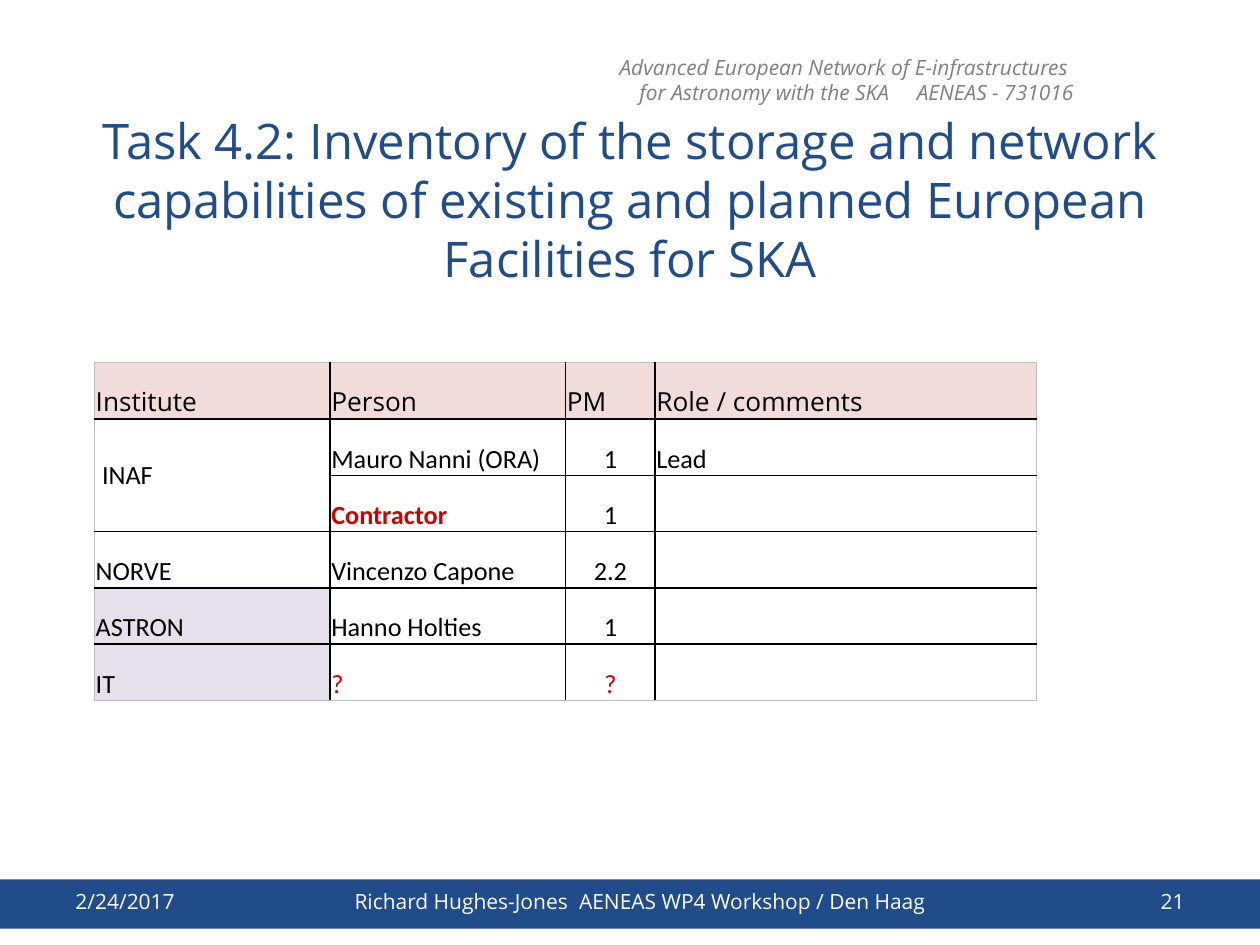
import dataclasses
import pptx
import pptx.dml.color
import pptx.enum.shapes
import pptx.enum.text
import pptx.oxml
import pptx.oxml.ns
import pptx.util

WIDE, HIGH = 10, 7.5
BLUE, WHITE, GREY, BLACK, RED = "204C8A", "FFFFFF", "808080", "000000", "CC0000"
PINK, LILAC, EDGE = "F2DCDB", "E6E0EC", "BFBFBF"
SANS, BODY = "Open Sans", "Calibri"
ALIGN = pptx.enum.text.PP_ALIGN
ANCHOR = pptx.enum.text.MSO_ANCHOR
inch = pptx.util.Inches


@dataclasses.dataclass
class Label:
    left: float
    top: float
    width: float
    height: float
    lines: list
    align: int
    color: str = WHITE
    italic: bool = False
    anchor: int = ANCHOR.MIDDLE


@dataclasses.dataclass
class Entry:
    text: str = ""
    color: str = BLACK
    bold: bool = False
    fill: str = ""


def tint(value: str) -> pptx.dml.color.RGBColor:
    return pptx.dml.color.RGBColor.from_string(value)


def style(para, size: float, face: str, color: str, align: int,
          bold: bool = False, italic: bool = False) -> None:
    para.alignment = align
    for font in [para.font] + [run.font for run in para.runs]:
        font.size = pptx.util.Pt(size)
        font.name = face
        font.bold = bold
        font.italic = italic
        font.color.rgb = tint(color)


def place(shape, left: float, top: float, width: float, height: float) -> None:
    shape.left, shape.top = inch(left), inch(top)
    shape.width, shape.height = inch(width), inch(height)


def write(slide, label: Label) -> None:
    box = slide.shapes.add_textbox(0, 0, 0, 0)
    place(box, label.left, label.top, label.width, label.height)
    frame = box.text_frame
    frame.word_wrap = True
    frame.vertical_anchor = label.anchor
    for row, parts in enumerate(label.lines):
        para = frame.add_paragraph() if row else frame.paragraphs[0]
        for part in parts:
            run = para.add_run()
            if isinstance(part, str):
                run.text = part
            else:
                run.text = " "
                run.font._element.set("spc", str(round(part * 100)))
        style(para, 12, SANS, label.color, label.align, italic=label.italic)


def rule(cell, side: str, color: str, width: float) -> None:
    cell._tc.get_or_add_tcPr().append(pptx.oxml.parse_xml(
        f'<a:ln{side} {pptx.oxml.ns.nsdecls("a")} w="{pptx.util.Pt(width)}">'
        f'<a:solidFill><a:srgbClr val="{color}"/></a:solidFill></a:ln{side}>'))


def fill_cell(cell, entry: Entry, row: int, col: int, last: tuple) -> None:
    outer = {"L": col == 0, "R": col == last[1], "T": row == 0, "B": row == last[0]}
    for side, edge in outer.items():
        rule(cell, side, EDGE if edge else BLACK, 0.5 if edge else 1)
    if entry.fill:
        cell.fill.solid()
        cell.fill.fore_color.rgb = tint(entry.fill)
    else:
        cell.fill.background()
    cell.margin_left = cell.margin_right = cell.margin_top = inch(0.01)
    cell.margin_bottom = 0
    cell.vertical_anchor = ANCHOR.BOTTOM
    cell.text_frame.text = entry.text
    align = ALIGN.CENTER if row and col == 2 else ALIGN.LEFT
    style(cell.text_frame.paragraphs[0], 15, BODY if row else SANS,
          entry.color, align, entry.bold)


def draw_table(slide, grid: list, cols: list, left: float, top: float, step: float) -> None:
    frame = slide.shapes.add_table(len(grid), len(cols), inch(left), inch(top),
                                   inch(sum(cols)), inch(step * len(grid)))
    table = frame.table
    table.first_row = table.horz_banding = False
    for col, width in zip(table.columns, cols):
        col.width = inch(width)
    last = len(grid) - 1, len(cols) - 1
    for row, line in enumerate(grid):
        for col, entry in enumerate(line):
            fill_cell(table.cell(row, col), entry, row, col, last)
    first = table.cell(1, 0)
    first.merge(table.cell(2, 0))
    first.vertical_anchor = ANCHOR.MIDDLE
    first.margin_left = inch(0.06)


def main() -> None:
    deck = pptx.Presentation()
    deck.slide_width, deck.slide_height = inch(WIDE), inch(HIGH)
    slide = deck.slides.add_slide(deck.slide_layouts[5])

    bar = slide.shapes.add_shape(pptx.enum.shapes.MSO_SHAPE.RECTANGLE, 0, 0, 0, 0)
    place(bar, 0, 6.98, WIDE, 0.39)
    bar.shadow.inherit = False
    bar.fill.solid()
    bar.fill.fore_color.rgb = tint(BLUE)
    bar.line.fill.background()

    title = slide.shapes.title
    place(title, 0.12, 0.99, WIDE - 0.24, 1.18)
    title.text_frame.text = ("Task 4.2: Inventory of the storage and network capabilities "
                             "of existing and planned European Facilities for SKA")
    title.text_frame.auto_size = pptx.enum.text.MSO_AUTO_SIZE.NONE
    title.text_frame.vertical_anchor = ANCHOR.MIDDLE
    style(title.text_frame.paragraphs[0], 28, SANS, BLUE, ALIGN.CENTER)

    foot, tall = 6.95, 0.4
    labels = [
        Label(4.37, 0.38, 4.25, 0.5,
              [["Advanced European Network of E-infrastructures "],
               ["for Astronomy with the SKA", 12.5, "AENEAS - 731016"]],
              ALIGN.RIGHT, GREY, True, ANCHOR.TOP),
        Label(0.5, foot, 1.35, tall, [["2/24/2017"]], ALIGN.LEFT),
        Label(1.85, foot, 6.46, tall,
              [["Richard Hughes-Jones", 3.1, "AENEAS WP4 Workshop / Den Haag"]],
              ALIGN.CENTER),
        Label(8.31, foot, 1.19, tall, [["21"]], ALIGN.RIGHT),
    ]
    for label in labels:
        write(slide, label)

    heads = ["Institute", "Person", "PM", "Role / comments"]
    grid = [
        [Entry(head, fill=PINK) for head in heads],
        [Entry("INAF"), Entry("Mauro Nanni (ORA)"), Entry("1"), Entry("Lead")],
        [Entry(), Entry("Contractor", RED, True), Entry("1"), Entry()],
        [Entry("NORVE"), Entry("Vincenzo Capone"), Entry("2.2"), Entry()],
        [Entry("ASTRON", fill=LILAC), Entry("Hanno Holties"), Entry("1"), Entry()],
        [Entry("IT", fill=LILAC), Entry("?", RED), Entry("?", RED), Entry()],
    ]
    draw_table(slide, grid, [1.87, 1.87, 0.71, 3.03], 0.75, 2.88, 2.68 / len(grid))
    deck.save("out.pptx")


if __name__ == "__main__":
    main()
